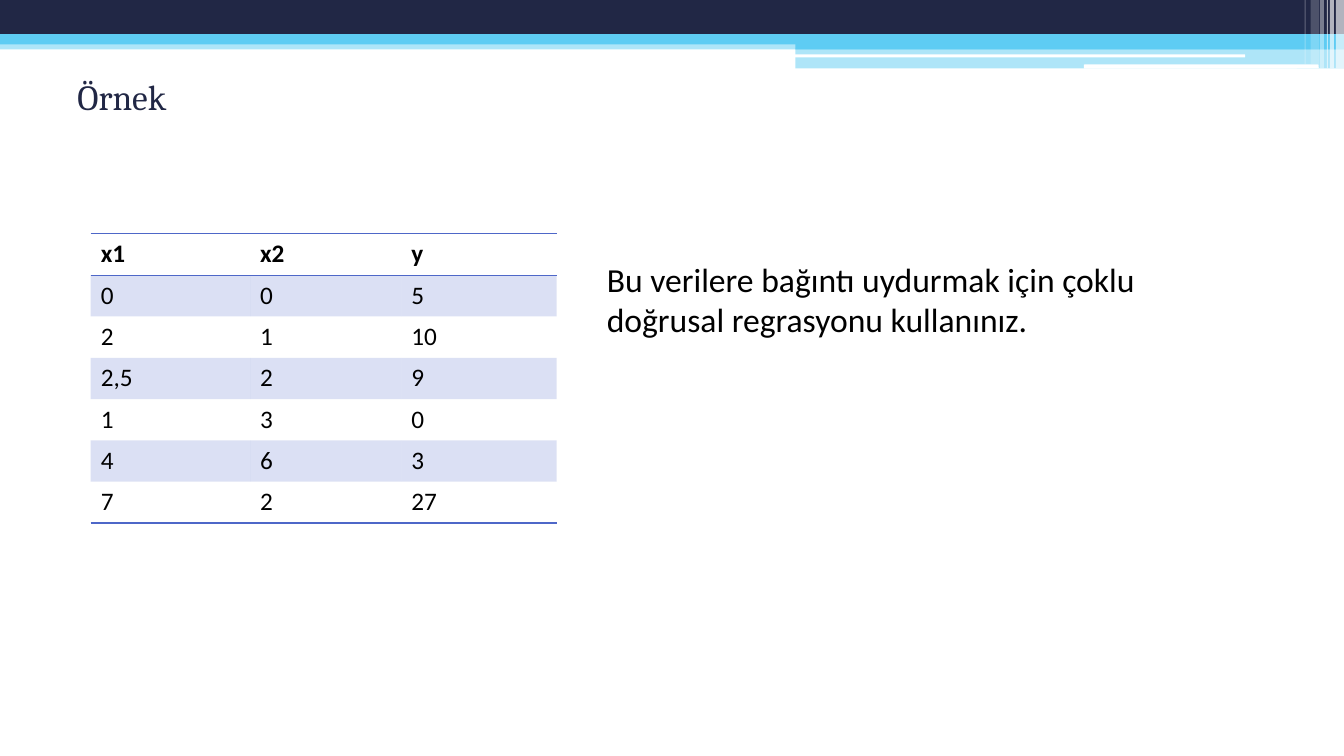
from lxml import etree
from pptx import Presentation
from pptx.dml.color import RGBColor
from pptx.enum import shapes, text
from pptx.oxml.ns import qn
from pptx.util import Inches, Pt

TITLE = "Örnek"
TASK = "Bu verilere bağıntı uydurmak için çoklu doğrusal regrasyonu kullanınız."
DATA = [
    ("x1", "x2", "y"),
    ("0", "0", "5"),
    ("2", "1", "10"),
    ("2,5", "2", "9"),
    ("1", "3", "0"),
    ("4", "6", "3"),
    ("7", "2", "27"),
]
COLUMN_WIDTHS = (1.58, 1.5, 1.54)
ROW_HEIGHT = 0.41

THEME = {
    "navy": "212745", "sky": "5ECCF3", "white": "FFFFFF", "black": "000000",
    "indigo": "4E67C8", "heading": "Cambria", "body": "Calibri",
    "title_size": 25.2, "task_size": 24, "cell_size": 18, "rule_width": 1,
    "band_opacity": 20,
}

# left, top, width, height, colour, opacity in percent
HEADER_BANDS = [
    (0, 0.4, 13.33, 0.09, "sky", 50),
    (0, 0, 13.33, 0.34, "navy", 100),
    (0, 0.34, 13.33, 0.1, "sky", 100),
    (7.89, 0.39, 5.44, 0.1, "sky", 100),
    (7.89, 0.48, 5.44, 0.2, "sky", 50),
]
# left, top, width, height
WHITE_BARS = [(7.88, 0.54, 4.47, 0.03), (10.75, 0.64, 2.33, 0.04)]
# left, width, height, opacity in percent
CORNER_STRIPES = [
    (13.25, 0.08, 0.68, 65),
    (13.19, 0.04, 0.68, 65),
    (13.16, 0.01, 0.68, 60),
    (13.09, 0.04, 0.68, 40),
    (13, 0.08, 0.64, 20),
    (12.94, 0.01, 0.64, 30),
]
NO_TABLE_STYLE = "{2D5ABB26-0587-4C30-8999-92F81FD0307C}"


def colour(key):
    return RGBColor.from_string(THEME[key])


def paint(fill, owner, key, opacity):
    """Solid fill; owner is the XML element that holds it."""
    fill.solid()
    fill.fore_color.rgb = colour(key)
    if opacity < 100:
        clr = owner.find(qn("a:solidFill")).find(qn("a:srgbClr"))
        etree.SubElement(clr, qn("a:alpha"), val=str(opacity * 1000))


def add_block(slide, box, key, opacity=100, kind=shapes.MSO_SHAPE.RECTANGLE):
    block = slide.shapes.add_shape(kind, *map(Inches, box))
    block.shadow.inherit = False
    block.line.fill.background()
    paint(block.fill, block._element.spPr, key, opacity)


def write(frame, words, size, font="body", ink="black", bold=False):
    run = frame.paragraphs[0].add_run()
    run.text = words
    run.font.color.rgb = colour(ink)
    formats = {"name": THEME[font], "size": Pt(THEME[size]), "bold": bold}
    for attribute, value in formats.items():
        setattr(run.font, attribute, value)


def add_text(slide, box, words, formats, **style):
    frame = slide.shapes.add_textbox(*map(Inches, box)).text_frame
    for attribute, value in formats.items():
        setattr(frame, attribute, value)
    write(frame, words, **style)


def add_rules(cell, sides):
    """Draw cell borders; sides lists "T" and "B" in that order."""
    properties = cell._tc.get_or_add_tcPr()
    for index, side in enumerate(sides):
        line = etree.Element(qn("a:ln" + side), w=str(Pt(THEME["rule_width"])))
        fill = etree.SubElement(line, qn("a:solidFill"))
        etree.SubElement(fill, qn("a:srgbClr"), val=THEME["indigo"])
        properties.insert(index, line)


def add_data_table(slide, left, top):
    size = (sum(COLUMN_WIDTHS), ROW_HEIGHT * len(DATA))
    table = slide.shapes.add_table(
        len(DATA), len(COLUMN_WIDTHS), *map(Inches, (left, top, *size))).table
    table._tbl.tblPr.find(qn("a:tableStyleId")).text = NO_TABLE_STYLE
    table.first_row = table.horz_banding = False
    for column, width in zip(table.columns, COLUMN_WIDTHS):
        column.width = Inches(width)
    for r, values in enumerate(DATA):
        table.rows[r].height = Inches(ROW_HEIGHT)
        sides = "TB" if r == 0 else "B" if r == len(DATA) - 1 else ""
        for c, value in enumerate(values):
            cell = table.cell(r, c)
            write(cell.text_frame, value, "cell_size", bold=r == 0)
            if r % 2:
                paint(cell.fill, cell._tc.tcPr, "indigo", THEME["band_opacity"])
            else:
                cell.fill.background()
            add_rules(cell, sides)


def main():
    deck = Presentation()
    deck.slide_width, deck.slide_height = Inches(13.33), Inches(7.5)
    slide = deck.slides.add_slide(deck.slide_layouts[6])

    for *box, key, opacity in HEADER_BANDS:
        add_block(slide, box, key, opacity)
    for box in WHITE_BARS:
        add_block(slide, box, "white", kind=shapes.MSO_SHAPE.ROUNDED_RECTANGLE)
    for left, width, height, opacity in CORNER_STRIPES:
        add_block(slide, (left, 0, width, height), "white", opacity)

    add_text(slide, (0.67, 0.68, 12, 0.55), TITLE,
             {"word_wrap": True, "vertical_anchor": text.MSO_ANCHOR.MIDDLE},
             size="title_size", font="heading", ink="navy")
    add_data_table(slide, 0.9, 2.32)
    add_text(slide, (5.92, 2.52, 6.31, 0.91), TASK,
             {"word_wrap": True, "auto_size": text.MSO_AUTO_SIZE.SHAPE_TO_FIT_TEXT},
             size="task_size")
    deck.save("out.pptx")


if __name__ == "__main__":
    main()
